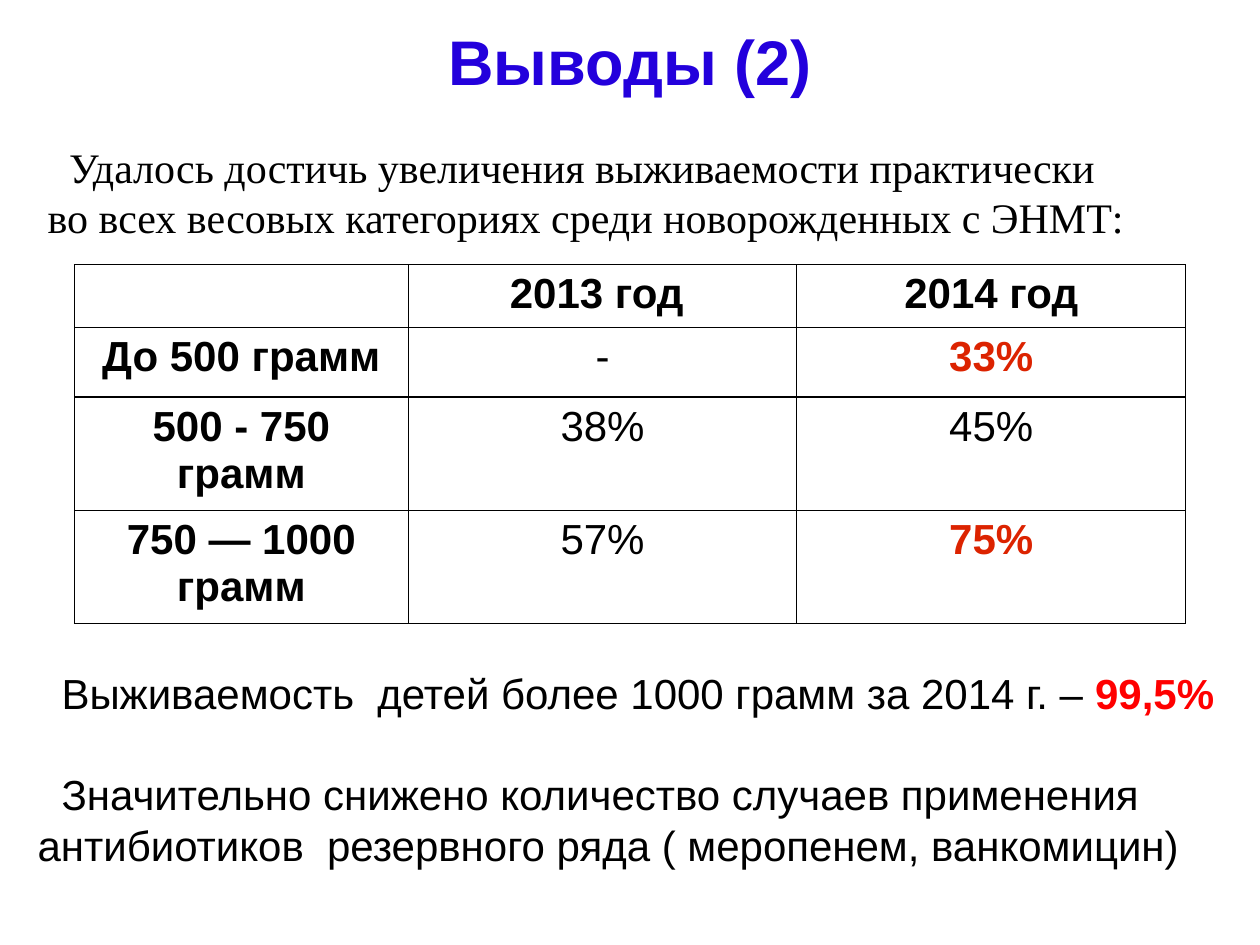
from dataclasses import dataclass

import lxml.etree
import pptx
import pptx.dml.color
import pptx.enum.text
import pptx.oxml.ns
import pptx.util
from pptx.util import Inches, Pt


@dataclass(frozen=True)
class Theme:
    """Colours, fonts and type sizes of the slide."""
    black: str = "000000"
    title: str = "2300DC"
    growth: str = "DC2300"
    accent: str = "FF0000"
    sans: str = "Arial"
    serif: str = "Times New Roman"
    title_size: int = 36
    body_size: int = 24
    border: float = 0.75


THEME = Theme()
CENTER = pptx.enum.text.PP_ALIGN.CENTER


def style(font, color=THEME.black, bold=False, name=THEME.sans, size=THEME.body_size):
    """Apply face, size, weight and colour to a font."""
    font.name, font.size, font.bold = name, Pt(size), bold
    font.color.rgb = pptx.dml.color.RGBColor.from_string(color)


def indent_first_line(paragraph, indent):
    """Indent the first line of a paragraph."""
    properties = paragraph._p.get_or_add_pPr()
    properties.set("marL", "0")
    properties.set("indent", str(indent))


def outline(cell):
    """Draw a thin black border on all sides of a table cell."""
    properties = cell._tc.get_or_add_tcPr()
    for position, side in enumerate(("lnL", "lnR", "lnT", "lnB")):
        line = lxml.etree.Element(pptx.oxml.ns.qn(f"a:{side}"), w=str(Pt(THEME.border)))
        fill = lxml.etree.SubElement(line, pptx.oxml.ns.qn("a:solidFill"))
        lxml.etree.SubElement(fill, pptx.oxml.ns.qn("a:srgbClr"), val=THEME.black)
        properties.insert(position, line)


def add_title(slide, left, top, width, height):
    """Place and format the title placeholder."""
    title = slide.shapes.title
    title.left, title.top, title.width, title.height = left, top, width, height
    frame = title.text_frame
    frame.text = "Выводы (2)"
    frame.margin_left = frame.margin_right = frame.margin_top = 0
    frame.margin_bottom = Inches(0.3)
    frame.vertical_anchor = pptx.enum.text.MSO_ANCHOR.MIDDLE
    heading = frame.paragraphs[0]
    heading.alignment = CENTER
    style(heading.font, THEME.title, True, size=THEME.title_size)


def add_paragraphs(slide, left, top, width, height, texts):
    """Add a wrapped text box with one paragraph per text and return its paragraphs."""
    frame = slide.shapes.add_textbox(left, top, width, height).text_frame
    frame.word_wrap = True
    for number, text in enumerate(texts):
        paragraph = frame.add_paragraph() if number else frame.paragraphs[0]
        paragraph.text = text
    return frame.paragraphs


def add_introduction(slide, left, top, width, height):
    """Add the statement above the survival table."""
    lines = add_paragraphs(slide, left, top, width, height, [
        "Удалось достичь увеличения выживаемости практически",
        "во всех весовых категориях среди новорожденных с ЭНМТ:",
    ])
    indent_first_line(lines[0], Inches(0.17))
    for line in lines:
        style(line.font, name=THEME.serif)


def add_survival_table(slide, left, top, width, height):
    """Add survival by birth weight and year, marking the notable growth."""
    rows = [
        ("", "2013 год ", "2014 год"),
        ("До 500 грамм", "-", "33%"),
        ("500 - 750 грамм", "38%", "45%"),
        ("750 — 1000 грамм", "57%", "75%"),
    ]
    growth_cells = {(1, 2), (3, 2)}
    weight_width = Inches(2.65)
    year_width = (width - weight_width) // 2
    table = slide.shapes.add_table(len(rows), 3, left, top, width, height).table
    for column, column_width in zip(table.columns, (weight_width, year_width, year_width)):
        column.width = column_width
    for row, row_height in zip(table.rows, (0.44, 0.55, 0.45, 0.68)):
        row.height = Inches(row_height)
    for r, values in enumerate(rows):
        for c, value in enumerate(values):
            cell = table.cell(r, c)
            cell.text = value
            cell.fill.background()
            outline(cell)
            paragraph = cell.text_frame.paragraphs[0]
            paragraph.alignment = CENTER
            grown = (r, c) in growth_cells
            style(paragraph.font, THEME.growth if grown else THEME.black,
                  r == 0 or c == 0 or grown)


def add_conclusions(slide, left, top, width, height):
    """Add the two conclusions below the table."""
    survival, antibiotics = add_paragraphs(slide, left, top, width, height, [
        "Выживаемость  детей более 1000 грамм за 2014 г. – ",
        "Значительно снижено количество случаев применения "
        "антибиотиков  резервного ряда ( меропенем, ванкомицин)",
    ])
    for conclusion in (survival, antibiotics):
        indent_first_line(conclusion, Inches(0.19))
        style(conclusion.font)
    antibiotics.space_before = Pt(29)
    rate = survival.add_run()
    rate.text = "99,5%"
    style(rate.font, THEME.accent, True)


def main():
    """Build the slide and save it."""
    deck = pptx.Presentation()
    deck.slide_width, deck.slide_height = Inches(10), Inches(7.5)
    slide = deck.slides.add_slide(deck.slide_layouts[5])
    add_title(slide, Inches(0.5), Inches(0.24), Inches(9), Inches(0.78))
    add_introduction(slide, Inches(0.28), Inches(1.07), Inches(9.45), Inches(5.71))
    add_survival_table(slide, Inches(0.59), Inches(2.1), Inches(8.82), Inches(2.12))
    add_conclusions(slide, Inches(0.2), Inches(5.25), Inches(9.61), Inches(1.72))
    deck.save("out.pptx")


if __name__ == "__main__":
    main()
